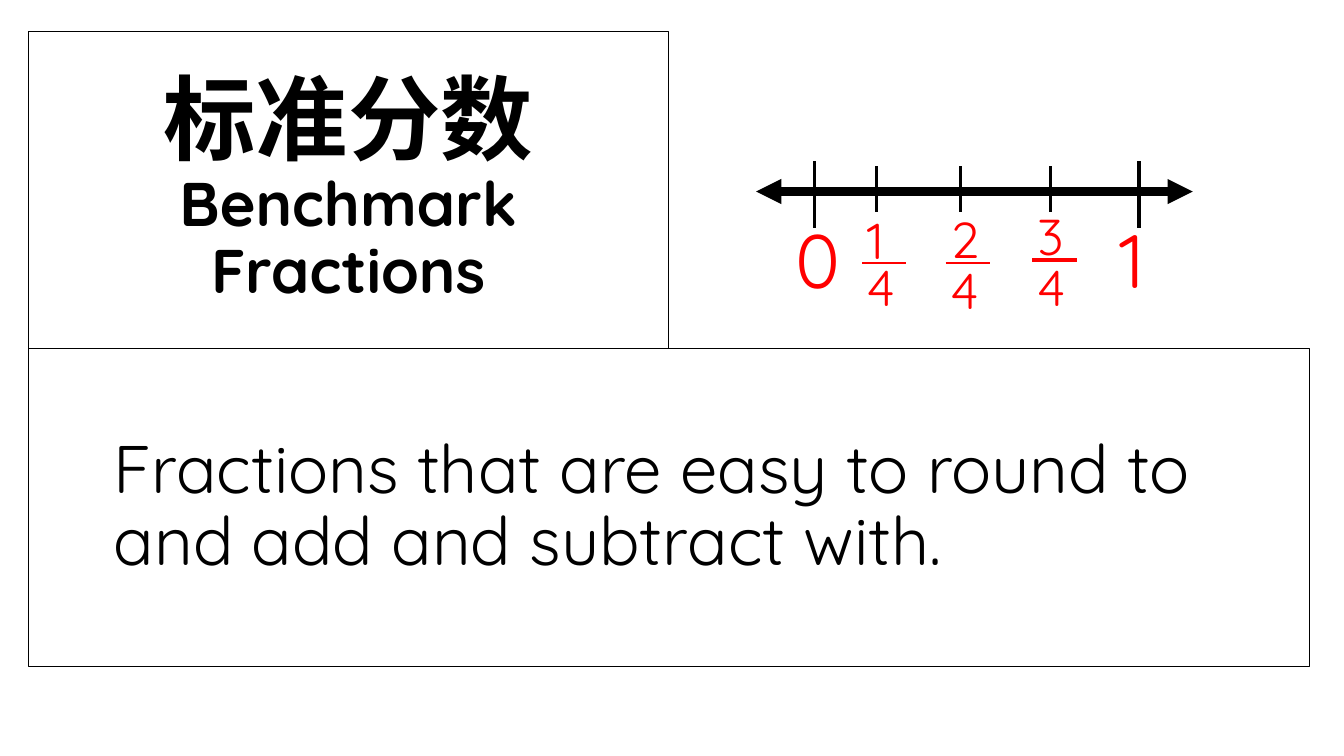
from lxml import etree
from pptx import Presentation
from pptx.dml.color import RGBColor
from pptx.enum.shapes import MSO_CONNECTOR, MSO_SHAPE
from pptx.enum.text import MSO_ANCHOR, PP_ALIGN
from pptx.oxml.ns import qn
from pptx.util import Inches, Pt

STRAIGHT = MSO_CONNECTOR.STRAIGHT
RECT = MSO_SHAPE.RECTANGLE
MIDDLE = MSO_ANCHOR.MIDDLE
CENTER, LEFT = PP_ALIGN.CENTER, PP_ALIGN.LEFT
BLACK, RED = "000000", "FF0000"
FONT = "Quicksand"

# Content: runs are (text, size, font, bold)
TITLE = [("标准分数", 66, "Lato", True), ("Benchmark Fractions", 44, FONT, True)]
DEFINITION = [("Fractions that are easy to round to and add and subtract with.",
               48, FONT, False)]
CARDS = [  # left, top, width, height, runs, alignment, left margin
    (0.28, 0.31, 6.35, 3.15, TITLE, CENTER, 0),
    (0.28, 3.46, 12.71, 3.15, DEFINITION, LEFT, 0.75),
]
AXIS = (7.5, 11.83, 1.9)  # start, end, y
TICKS = [  # x, top, bottom, weight
    (8.08, 1.6, 2.26, 2.25),
    (8.69, 1.65, 2.1, 2.25),
    (9.53, 1.65, 2.1, 2.25),
    (10.42, 1.65, 2.1, 2.25),
    (11.3, 1.6, 2.26, 3),
]
WHOLES = [("0", 7.79), ("1", 11.0)]  # digit, left
FRACTIONS = [  # numerator, denominator, left, tops of both, bar y, bar weight
    ("1", "4", 8.5, 2.03, 2.49, 2.61, 1.5),
    ("2", "4", 9.33, 2.02, 2.52, 2.61, 1.5),
    ("3", "4", 10.19, 1.99, 2.49, 2.58, 2.25),
]


def rgb(value):
    return RGBColor.from_string(value)


def add_run(p, text, size, font, bold, color):
    r = p.add_run()
    r.text = text
    r.font.size = Pt(size)
    r.font.name = font
    r.font.bold = bold
    r.font.color.rgb = rgb(color)


def add_line(shapes, x1, y1, x2, y2, color, weight, arrows=False):
    c = shapes.add_connector(STRAIGHT, Inches(x1), Inches(y1), Inches(x2), Inches(y2))
    c.line.color.rgb = rgb(color)
    c.line.width = Pt(weight)
    if arrows:
        ln = c.line._get_or_add_ln()
        for end in ("a:headEnd", "a:tailEnd"):
            etree.SubElement(ln, qn(end), type="triangle")
    etree.SubElement(c._element.spPr, qn("a:effectLst"))


def add_digit(shapes, text, left, top, width, height, size):
    sp = shapes.add_textbox(Inches(left), Inches(top), Inches(width), Inches(height))
    tf = sp.text_frame
    tf.word_wrap = True
    add_run(tf.paragraphs[0], text, size, FONT, False, RED)


def add_card(shapes, left, top, width, height, runs, align, margin):
    sp = shapes.add_shape(RECT, Inches(left), Inches(top), Inches(width), Inches(height))
    sp.shadow.inherit = False
    sp.fill.background()
    sp.line.color.rgb = rgb(BLACK)
    sp.line.width = Pt(0.75)
    tf = sp.text_frame
    tf.word_wrap = True
    tf.vertical_anchor = MIDDLE
    p = tf.paragraphs[0]
    p.alignment = align
    p.line_spacing = 0.9
    if margin:
        p._p.get_or_add_pPr().set("marL", str(Inches(margin)))
    for i, run in enumerate(runs):
        if i:
            p.add_line_break()
        add_run(p, *run, BLACK)


prs = Presentation()
prs.slide_width, prs.slide_height = Inches(13.33), Inches(7.5)
s = prs.slides.add_slide(prs.slide_layouts[6])

# Term and definition cards
for card in CARDS:
    add_card(s.shapes, *card)

# Number line
start, end, axis_y = AXIS
add_line(s.shapes, start, axis_y, end, axis_y, BLACK, 6, arrows=True)
for x, top, bottom, weight in TICKS:
    add_line(s.shapes, x, top, x, bottom, BLACK, weight)

# Whole numbers
for digit, left in WHOLES:
    add_digit(s.shapes, digit, left, 2.06, 0.72, 1.01, 54)

# Stacked fractions, one group each
for num, den, left, num_top, den_top, bar_y, weight in FRACTIONS:
    shapes = s.shapes.add_group_shape().shapes
    add_digit(shapes, num, left, num_top, 0.57, 1.31, 36)
    add_digit(shapes, den, left, den_top, 0.56, 0.71, 36)
    add_line(shapes, left + 0.05, bar_y, left + 0.49, bar_y, RED, weight)

prs.save("out.pptx")
